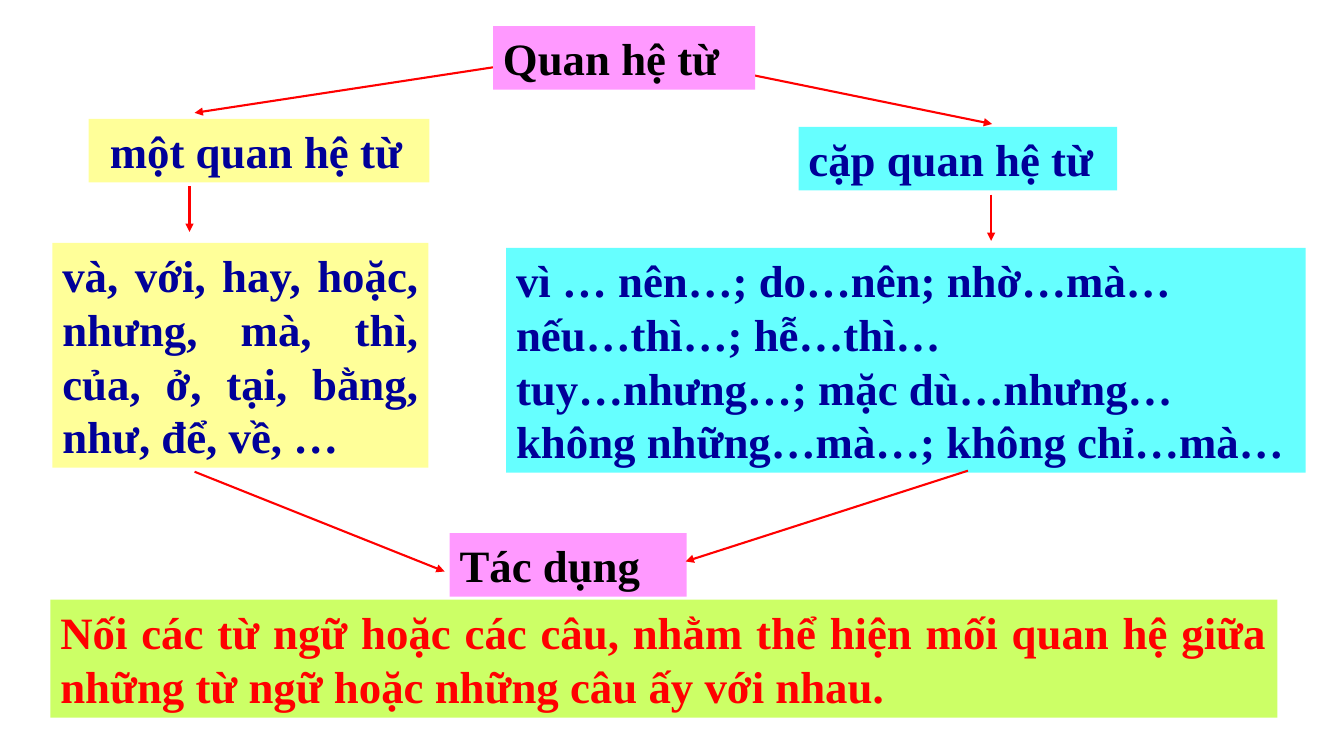
from pptx import Presentation, util as u
from pptx.dml.color import RGBColor
from pptx.enum import shapes as sh, text as tx
from pptx.oxml.ns import qn
from lxml import etree

PX = 9144  # EMU in one px, 100 px to the inch
FONT = "Times New Roman"
YELLOW, CYAN, PINK, LIME = "FFFF99", "66FFFF", "FF99FF", "CCFF66"
NAVY, BLACK, RED = "000099", "000000", "FF0000"

# Boxes: left, top, width, height, fill, ink, lines
BOXES = [
    (88, 118, 338, 63, YELLOW, NAVY, " một quan hệ từ"),
    (792, 126, 316, 63, CYAN, NAVY, "cặp quan hệ từ"),
    (52, 241, 373, 223, YELLOW, NAVY,
     "và, với, hay, hoặc, nhưng, mà, thì, của, ở, tại, bằng, như, để, về, …"),
    (502, 246, 793, 223, CYAN, NAVY,
     "vì … nên…; do…nên; nhờ…mà…\n"
     "nếu…thì…; hễ…thì…\n"
     "tuy…nhưng…; mặc dù…nhưng…\n"
     "không những…mà…; không chỉ…mà…"),
    (446, 529, 235, 63, PINK, BLACK, "Tác dụng"),
    (50, 595, 1217, 117, LIME, RED,
     "Nối các từ ngữ hoặc các câu, nhằm thể hiện mối quan hệ giữa "
     "những từ ngữ hoặc những câu ấy với nhau."),
    (489, 26, 260, 63, PINK, BLACK, "Quan hệ từ"),
]

# Arrows: start x, y, end x, y
SPLITS = [(527, 61, 193, 112), (695, 64, 984, 123)]
STEPS = [(188, 185, 188, 230), (983, 193, 983, 239),
         (193, 468, 441, 567), (960, 467, 680, 557)]


def px(*nums):
    return [u.Emu(n * PX) for n in nums]


def color(code):
    return RGBColor.from_string(code)


def add_box(slide, left, top, width, height, fill, ink, words):
    box = slide.shapes.add_textbox(*px(left, top, width, height))
    box.fill.solid()
    box.fill.fore_color.rgb = color(fill)
    frame = box.text_frame
    frame.word_wrap = True
    frame.auto_size = tx.MSO_AUTO_SIZE.SHAPE_TO_FIT_TEXT
    frame.text = words
    for para in frame.paragraphs:
        para.alignment = tx.PP_ALIGN.JUSTIFY
        for run in para.runs:
            font = run.font
            font.name, font.size, font.bold = FONT, u.Pt(32), True
            font.color.rgb = color(ink)


def add_arrow(slide, *ends):
    arrow = slide.shapes.add_connector(sh.MSO_CONNECTOR.STRAIGHT, *px(*ends))
    arrow.line.color.rgb = color(RED)
    arrow.line.width = u.Pt(1.5)
    etree.SubElement(arrow.line._get_or_add_ln(), qn("a:tailEnd"), type="triangle")
    etree.SubElement(arrow._element.spPr, qn("a:effectLst"))


def main():
    prs = Presentation()
    prs.slide_width, prs.slide_height = px(1333, 750)
    slide = prs.slides.add_slide(prs.slide_layouts[6])

    # Arrows that start behind the title box
    for ends in SPLITS:
        add_arrow(slide, *ends)

    # Text boxes
    for box in BOXES:
        add_box(slide, *box)

    # Arrows between the lower boxes
    for ends in STEPS:
        add_arrow(slide, *ends)

    prs.save("out.pptx")


if __name__ == "__main__":
    main()
